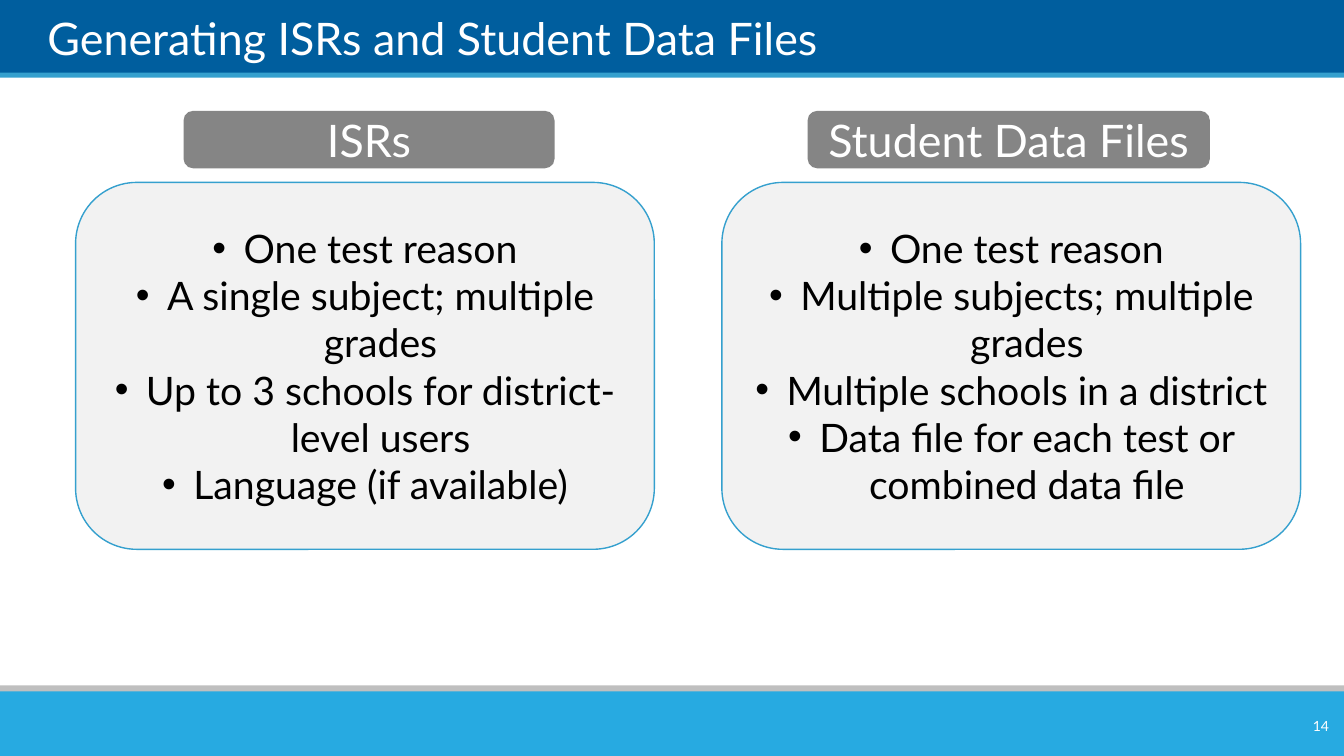
import pptx
import pptx.dml.color
import pptx.enum.shapes
import pptx.enum.text
import pptx.oxml.ns
import pptx.util
import lxml.etree

Inches = pptx.util.Inches
ALIGN = pptx.enum.text.PP_ALIGN
ANCHOR = pptx.enum.text.MSO_ANCHOR
SHAPE = pptx.enum.shapes.MSO_SHAPE

SLIDE_WIDTH, SLIDE_HEIGHT = 13.33, 7.5
PANEL_WIDTH, PANEL_HEIGHT = 5.74, 3.64
PANEL_TOP, HEADING_TOP, HEADING_HEIGHT = 1.81, 1.1, 0.57
BULLET_INDENT = 0.31

COLUMNS = [
    (0.75, 1.82, 3.68, "ISRs", [
        "One test reason",
        "A single subject; multiple grades",
        "Up to 3 schools for district-level users",
        "Language (if available)",
    ]),
    (7.16, 8.01, 3.99, "Student Data Files", [
        "One test reason",
        "Multiple subjects; multiple grades",
        "Multiple schools in a district",
        "Data file for each test or combined data file",
    ]),
]


def color(hex_value):
    return pptx.dml.color.RGBColor.from_string(hex_value)


def add_block(slide, box, fill, line=None, preset=SHAPE.RECTANGLE):
    block = slide.shapes.add_shape(preset, *map(Inches, box))
    block.shadow.inherit = False
    block.fill.solid()
    block.fill.fore_color.rgb = color(fill)
    if line:
        block.line.color.rgb = color(line)
        block.line.width = pptx.util.Pt(1)
    else:
        block.line.fill.background()
    return block


def add_bullet(paragraph):
    properties = paragraph._p.get_or_add_pPr()
    properties.set("marL", str(Inches(BULLET_INDENT)))
    properties.set("indent", str(-Inches(BULLET_INDENT)))
    for tag, key, value in (("a:buFont", "typeface", "Arial"), ("a:buChar", "char", "•")):
        lxml.etree.SubElement(properties, pptx.oxml.ns.qn(tag)).set(key, value)


def write_text(frame, lines, size, hex_value, align, anchor=ANCHOR.MIDDLE, bulleted=False):
    frame.word_wrap = True
    frame.vertical_anchor = anchor
    frame.text = "\n".join(lines)
    for paragraph in frame.paragraphs:
        paragraph.alignment = align
        if bulleted:
            add_bullet(paragraph)
        for run in paragraph.runs:
            run.font.name = "Lato"
            run.font.size = pptx.util.Pt(size)
            run.font.color.rgb = color(hex_value)


def add_header(slide, left, top, width, title):
    add_block(slide, (left, top - 0.01, width, 0.75), "005E9E")
    add_block(slide, (left, top + 0.72, width, 0.05), "35A0CE")
    title_box = slide.shapes.add_textbox(
        Inches(left + 0.47), Inches(top + 0.07), Inches(12.05), Inches(0.57))
    frame = title_box.text_frame
    frame.margin_left = frame.margin_right = frame.margin_top = frame.margin_bottom = 0
    write_text(frame, [title], 32, "FFFFFF", ALIGN.LEFT, ANCHOR.BOTTOM)


def add_footer(slide, left, top, width, page_number):
    add_block(slide, (left, top, width, 0.14), "BFBFBF")
    add_block(slide, (left, top + 0.06, width, 0.64), "27AAE1")
    number_box = slide.shapes.add_textbox(
        Inches(left + width - 0.82), Inches(top + 0.25), Inches(0.77), Inches(0.3))
    write_text(number_box.text_frame, [page_number], 10, "FFFFFF", ALIGN.RIGHT)


def add_column(slide, panel_left, heading_left, heading_width, heading, points):
    panel = add_block(slide, (panel_left, PANEL_TOP, PANEL_WIDTH, PANEL_HEIGHT),
                      "F2F2F2", "35A0CE", SHAPE.ROUNDED_RECTANGLE)
    write_text(panel.text_frame, points, 28, "000000", ALIGN.CENTER, bulleted=True)
    tab = add_block(slide, (heading_left, HEADING_TOP, heading_width, HEADING_HEIGHT),
                    "858585", preset=SHAPE.ROUNDED_RECTANGLE)
    write_text(tab.text_frame, [heading], 32, "FFFFFF", ALIGN.CENTER)


def main():
    presentation = pptx.Presentation()
    presentation.slide_width = Inches(SLIDE_WIDTH)
    presentation.slide_height = Inches(SLIDE_HEIGHT)
    slide = presentation.slides.add_slide(presentation.slide_layouts[6])
    add_header(slide, 0, 0, SLIDE_WIDTH, "Generating ISRs and Student Data Files")
    add_footer(slide, 0, 6.8, SLIDE_WIDTH, "14")
    for column in COLUMNS:
        add_column(slide, *column)
    presentation.save("out.pptx")


if __name__ == "__main__":
    main()
